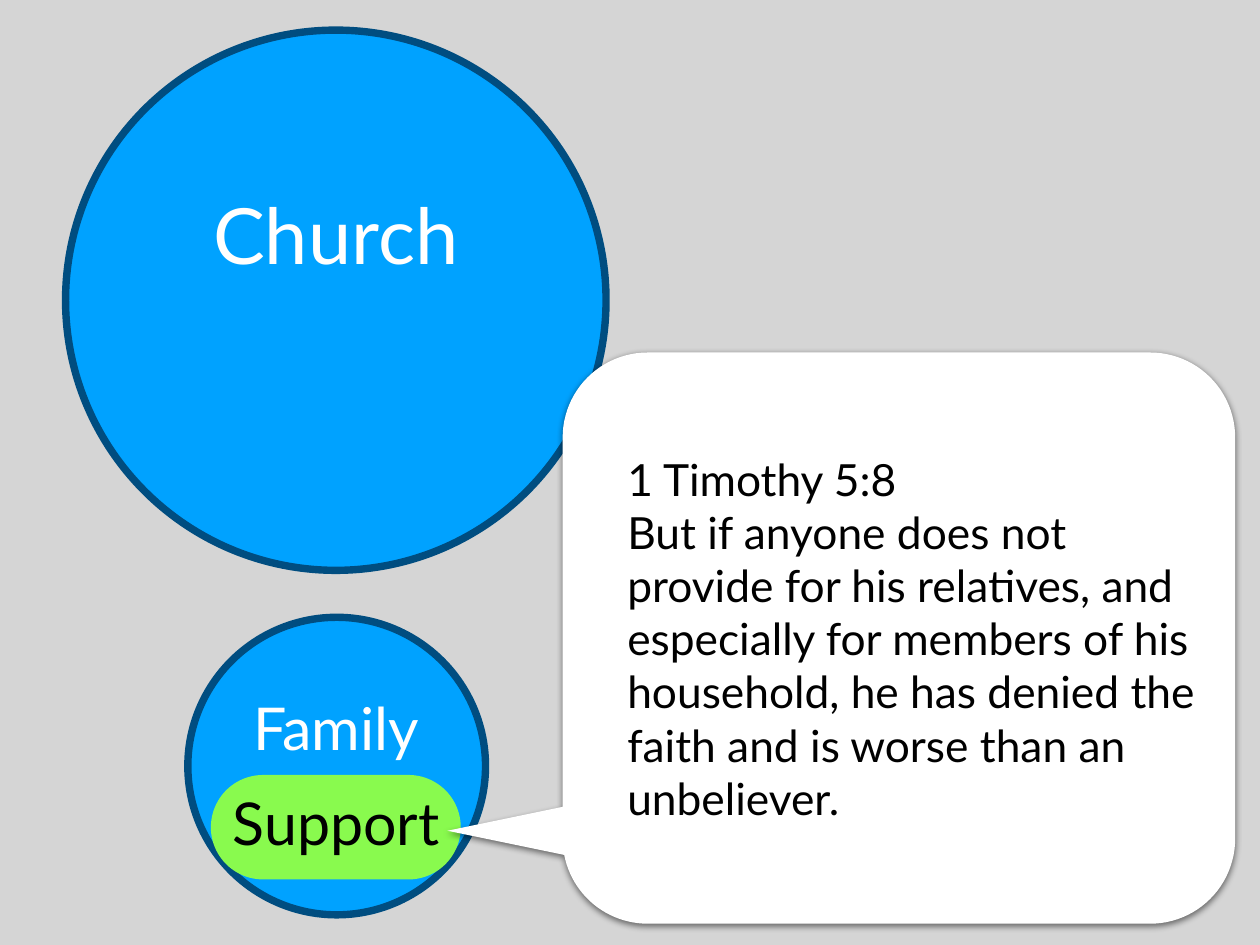
"""Build a slide on support from church and family, with a verse callout."""
import math

import lxml.etree
import pptx
import pptx.dml.color
import pptx.enum.shapes
import pptx.enum.text
import pptx.oxml
import pptx.util

Inches = pptx.util.Inches
Pt = pptx.util.Pt
MSO_SHAPE = pptx.enum.shapes.MSO_SHAPE
TEXT = pptx.enum.text


def paint(target, color):
    """Give a fill one solid colour."""
    target.solid()
    target.fore_color.rgb = pptx.dml.color.RGBColor.from_string(color)


def add_text(place, lines, size, color, align, wrap):
    """Add a text box with one paragraph for each line."""
    box = page.shapes.add_textbox(*map(Inches, place))
    frame = box.text_frame
    frame.margin_left = frame.margin_right = Inches(0.06)
    frame.margin_top = frame.margin_bottom = Inches(0.06)
    frame.vertical_anchor = TEXT.MSO_ANCHOR.MIDDLE
    frame.word_wrap = wrap
    if not wrap:
        frame.auto_size = TEXT.MSO_AUTO_SIZE.SHAPE_TO_FIT_TEXT
    frame.text = "\n".join(lines)
    for para in frame.paragraphs:
        para.alignment = align
        for span in para.runs:
            span.font.name = "Lato"
            span.font.size = Pt(size)
            paint(span.font.fill, color)


deck = pptx.Presentation()
deck.slide_width = Inches(14.22)
deck.slide_height = Inches(10.67)
page = deck.slides.add_slide(deck.slide_layouts[6])
paint(page.background.fill, "D5D5D5")

for left, top, diameter in [(0.74, 0.34, 6.1), (2.12, 6.97, 3.36)]:
    circle = page.shapes.add_shape(
        MSO_SHAPE.OVAL, Inches(left), Inches(top), Inches(diameter), Inches(diameter))
    circle.shadow.inherit = False
    paint(circle.fill, "00A2FF")
    paint(circle.line.fill, "004D80")
    circle.line.width = Pt(6)

pill = page.shapes.add_shape(
    MSO_SHAPE.ROUNDED_RECTANGLE, Inches(2.38), Inches(8.75), Inches(2.82), Inches(1.18))
pill.adjustments[0] = 0.5
pill.shadow.inherit = False
paint(pill.fill, "89FA4E")
pill.line.fill.background()

labels = [
    ("Church", (2.26, 1.99, 3.06, 1.29), 63, "FFFFFF"),
    ("Family", (2.73, 7.7, 2.13, 1.01), 48, "FFFFFF"),
    ("Support", (2.48, 8.78, 2.63, 1.01), 48, "000000"),
]
for label, place, size, color in labels:
    add_text(place, [label], size, color, TEXT.PP_ALIGN.CENTER, False)

radius = 0.96
corners = [
    (7.31, 4.94, 180, 270),
    (12.98, 4.94, 270, 360),
    (12.98, 9.47, 0, 90),
    (7.31, 9.47, 90, 169),
]
steps = 24
outline = []
for center_x, center_y, first, last in corners:
    for step in range(steps + 1):
        angle = math.radians(first + (last - first) * step / steps)
        outline.append((Inches(center_x + radius * math.cos(angle)),
                        Inches(center_y + radius * math.sin(angle))))
outline += [(Inches(5.05), Inches(9.38)), (Inches(6.35), Inches(9.11))]
builder = page.shapes.build_freeform(*outline[0])
builder.add_line_segments(outline[1:], close=True)
callout = builder.convert_to_shape()
callout.shadow.inherit = False
paint(callout.fill, "FFFFFF")
callout.line.fill.background()
effects = callout.element.spPr.find(pptx.oxml.ns.qn("a:effectLst"))
shadow = lxml.etree.SubElement(
    effects, pptx.oxml.ns.qn("a:outerShdw"),
    blurRad=str(Pt(5)), dist=str(Pt(2)), dir="5400000", rotWithShape="0")
shade = lxml.etree.SubElement(shadow, pptx.oxml.ns.qn("a:srgbClr"), val="000000")
lxml.etree.SubElement(shade, pptx.oxml.ns.qn("a:alpha"), val="50000")

verse = [
    "1 Timothy 5:8",
    "But if anyone does not provide for his relatives, and especially for members "
    "of his household, he has denied the faith and is worse than an unbeliever.",
]
add_text((7.02, 4.24, 6.57, 5.93), verse, 36, "000000", TEXT.PP_ALIGN.LEFT, True)

deck.save("out.pptx")
